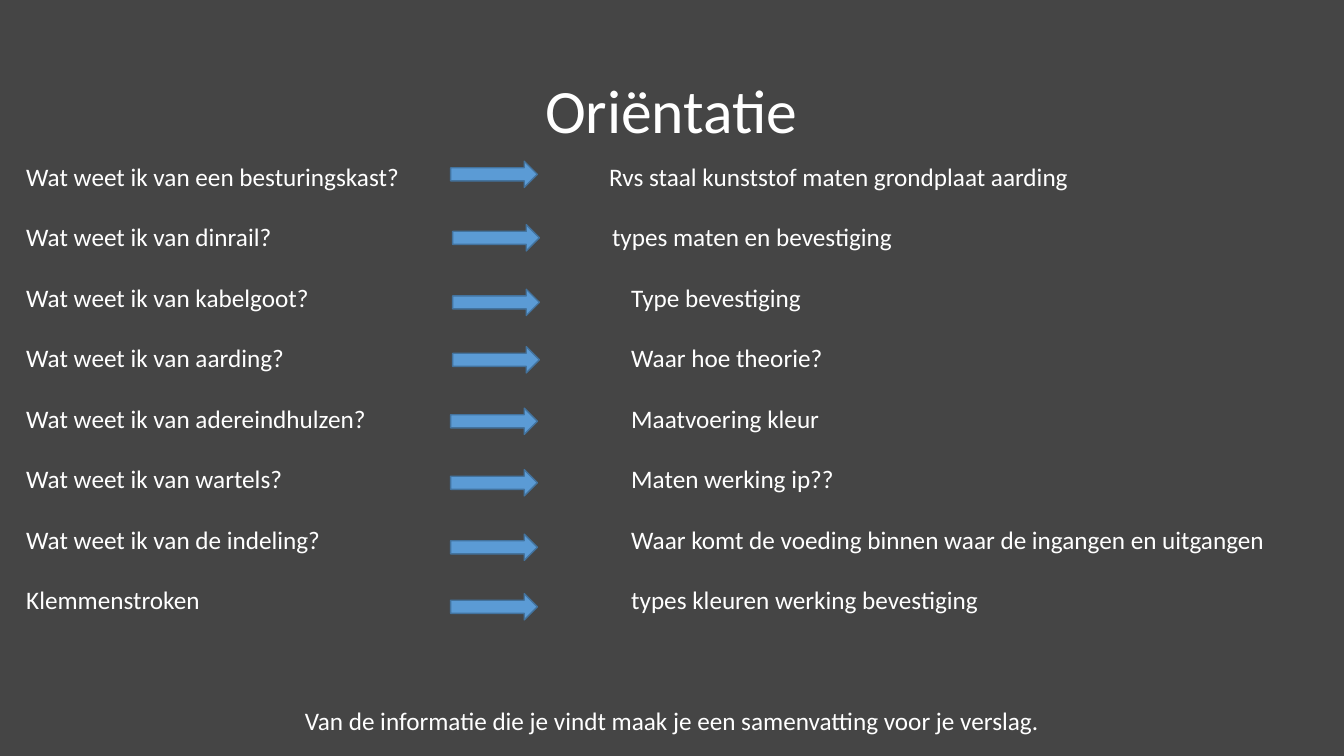
from dataclasses import dataclass

from lxml.etree import SubElement
from pptx import Presentation
from pptx.dml.color import RGBColor
from pptx.enum.shapes import MSO_SHAPE
from pptx.enum.text import MSO_ANCHOR, MSO_AUTO_SIZE, PP_ALIGN
from pptx.oxml.ns import qn
from pptx.slide import Slide
from pptx.text.text import TextFrame, _Paragraph
from pptx.util import Inches, Pt


@dataclass(frozen=True)
class Theme:
    back: RGBColor = RGBColor(0x45, 0x45, 0x45)
    text: RGBColor = RGBColor(0xFF, 0xFF, 0xFF)
    fill: RGBColor = RGBColor(0x5B, 0x9B, 0xD5)
    line: RGBColor = RGBColor(0x43, 0x73, 0x9E)
    font: str = "Calibri"
    head: float = 44
    body: float = 18
    gap: float = 21.6


@dataclass(frozen=True)
class Row:
    """A question, its answer and the arrow between them, in inches."""
    ask: str
    reply: str
    left: float
    top: float
    indent: float = 0.22


THEME = Theme()
CLOSING = "Van de informatie die je vindt maak je een samenvatting voor je verslag."
ROWS = [
    Row("Wat weet ik van een besturingskast?",
        "Rvs staal kunststof maten grondplaat aarding", 4.47, 1.6, 0),
    Row("Wat weet ik van dinrail?", "types maten en bevestiging", 4.49, 2.23, 0.03),
    Row("Wat weet ik van kabelgoot?", "Type bevestiging", 4.49, 2.87),
    Row("Wat weet ik van aarding?", "Waar hoe theorie?", 4.49, 3.44),
    Row("Wat weet ik van adereindhulzen?", "Maatvoering kleur", 4.47, 4.05),
    Row("Wat weet ik van wartels?", "Maten werking ip??", 4.47, 4.66),
    Row("Wat weet ik van de indeling?",
        "Waar komt de voeding binnen waar de ingangen en uitgangen", 4.47, 5.3),
    Row("Klemmenstroken", "types kleuren werking bevestiging", 4.47, 5.89),
]


def place(shape, left: float, top: float, width: float, height: float) -> None:
    shape.left, shape.top = Inches(left), Inches(top)
    shape.width, shape.height = Inches(width), Inches(height)


def style(par: _Paragraph, size: float) -> None:
    par.font.name = THEME.font
    par.font.size = Pt(size)
    par.font.color.rgb = THEME.text


def add_line(frame: TextFrame, text: str, indent: float = 0) -> None:
    """Add a line without a bullet, moved in by indent inches."""
    par = frame.add_paragraph() if frame.text else frame.paragraphs[0]
    par.text = text
    props = par._p.get_or_add_pPr()
    props.set("marL", str(Inches(indent)))
    props.set("indent", "0")
    SubElement(props, qn("a:buNone"))
    par.line_spacing = 1.0
    par.space_before = Pt(0)
    par.space_after = Pt(THEME.gap)
    style(par, THEME.body)


def add_title(slide: Slide) -> None:
    title = slide.shapes.title
    place(title, 0.91, 0.4, 11.5, 1.45)
    frame = title.text_frame
    frame.text = "Oriëntatie"
    frame.auto_size = MSO_AUTO_SIZE.NONE
    frame.vertical_anchor = MSO_ANCHOR.MIDDLE
    par = frame.paragraphs[0]
    par.alignment = PP_ALIGN.CENTER
    par.line_spacing = 0.9
    style(par, THEME.head)


def add_list(slide: Slide, index: int, left: float, width: float,
             lines: list[tuple[str, float]]) -> None:
    body = slide.placeholders[index]
    place(body, left, 1.55, width, 5.2)
    frame = body.text_frame
    frame.auto_size = MSO_AUTO_SIZE.NONE
    frame.vertical_anchor = MSO_ANCHOR.TOP
    for text, indent in lines:
        add_line(frame, text, indent)


def add_closing(slide: Slide) -> None:
    box = slide.shapes.add_textbox(
        Inches(0.16), Inches(6.95), Inches(13.01), Inches(0.4))
    box.text_frame.word_wrap = True
    par = box.text_frame.paragraphs[0]
    par.text = CLOSING
    par.alignment = PP_ALIGN.CENTER
    style(par, THEME.body)


def add_arrow(slide: Slide, row: Row) -> None:
    arrow = slide.shapes.add_shape(
        MSO_SHAPE.RIGHT_ARROW, Inches(row.left), Inches(row.top),
        Inches(0.86), Inches(0.26))
    arrow.shadow.inherit = False
    arrow.fill.solid()
    arrow.fill.fore_color.rgb = THEME.fill
    arrow.line.color.rgb = THEME.line
    arrow.line.width = Pt(1)


def main() -> None:
    deck = Presentation()
    deck.slide_width, deck.slide_height = Inches(13.33), Inches(7.5)
    slide = deck.slides.add_slide(deck.slide_layouts[3])
    slide.background.fill.solid()
    slide.background.fill.fore_color.rgb = THEME.back
    add_title(slide)
    add_list(slide, 1, 0.16, 4.2, [(row.ask, 0) for row in ROWS])
    add_list(slide, 2, 5.94, 7.23, [(row.reply, row.indent) for row in ROWS])
    add_closing(slide)
    for row in ROWS:
        add_arrow(slide, row)
    deck.save("out.pptx")


if __name__ == "__main__":
    main()
